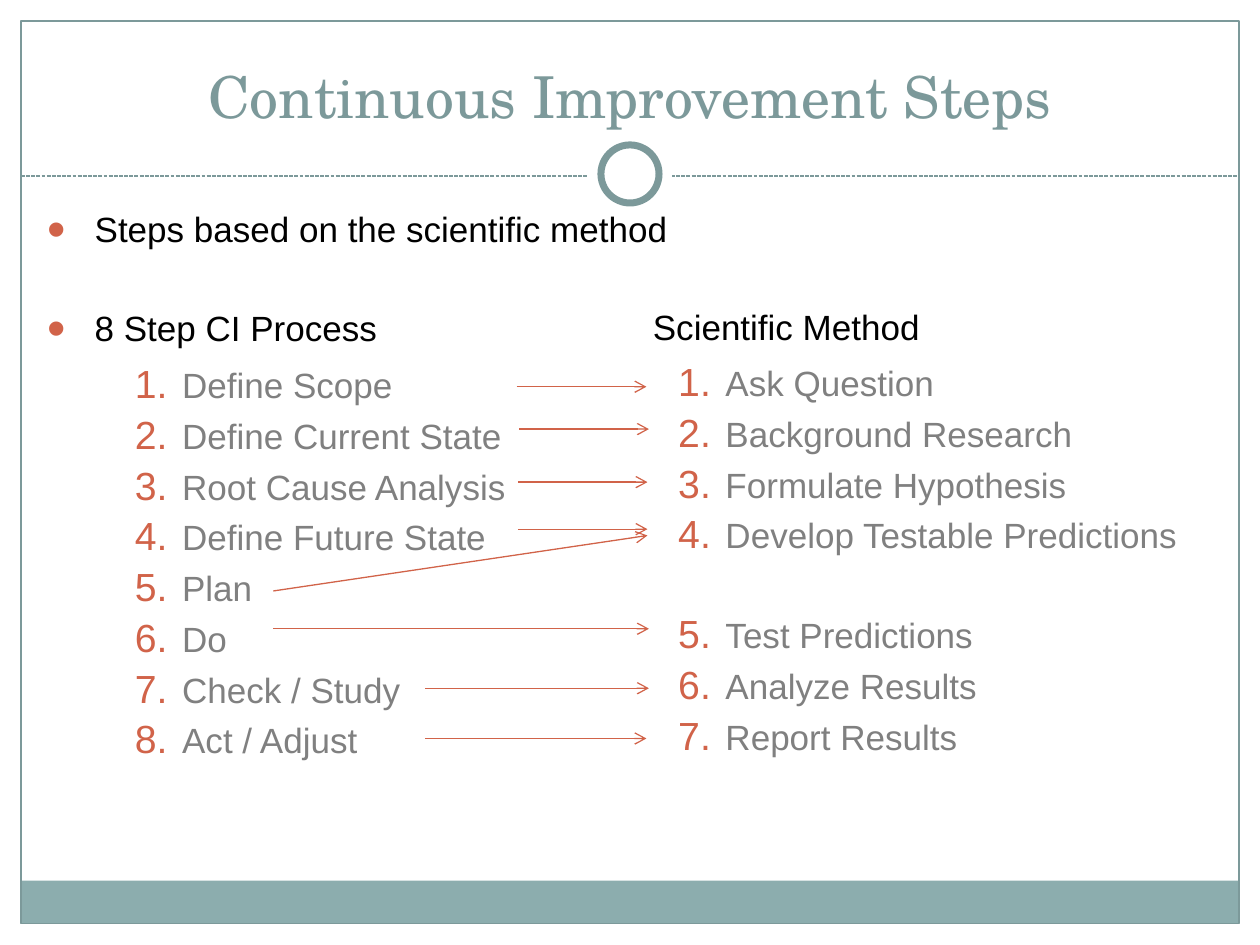
from lxml import etree
from pptx import Presentation
from pptx import util as u
from pptx.dml.color import RGBColor
from pptx.enum import dml, shapes, text
from pptx.oxml.ns import qn

Pt = u.Pt
HUES = {"teal": "7C999A", "band": "8CADAE", "red": "D16349",
        "gray": "808080", "black": "000000", "white": "FFFFFF"}
LEFT = ["Define Scope", "Define Current State", "Root Cause Analysis",
        "Define Future State", "Plan", "Do", "Check / Study", "Act / Adjust"]
RIGHT = ["Ask Question", "Background Research", "Formulate Hypothesis",
         "Develop Testable Predictions", "Test Predictions",
         "Analyze Results", "Report Results"]

deck = Presentation()
deck.slide_width, deck.slide_height = Pt(720), Pt(540)
slide = deck.slides.add_slide(deck.slide_layouts[6])


def hue(name):
    return RGBColor.from_string(HUES[name])


def add_para(frame, words, size=20, font="Arial", color="black", before=3,
             after=3, lines=0.9, margin=0, hang=0, bullet=None):
    para = frame.paragraphs[0]
    if para.runs:
        para = frame.add_paragraph()
    para.space_before, para.space_after = Pt(before), Pt(after)
    para.line_spacing = lines
    run = para.add_run()
    run.text = words
    run.font.size, run.font.name = Pt(size), font
    run.font.color.rgb = hue(color)
    props = para._p.get_or_add_pPr()
    props.set("marL", str(Pt(margin)))
    props.set("indent", str(-Pt(hang)))
    if bullet:
        tag, scale, attrs = bullet
        tint = etree.SubElement(props, qn("a:buClr"))
        etree.SubElement(tint, qn("a:srgbClr"), val=HUES["red"])
        etree.SubElement(props, qn("a:buSzPct"), val=str(scale * 1000))
        etree.SubElement(props, qn("a:buFont"), typeface="Arial")
        etree.SubElement(props, qn(tag), **attrs)
    return para


def add_line(x1, y1, x2, y2, color):
    line = slide.shapes.add_connector(
        shapes.MSO_CONNECTOR.STRAIGHT, Pt(x1), Pt(y1), Pt(x2), Pt(y2))
    line.line.color.rgb = hue(color)
    line.line.width = Pt(0.75)
    etree.SubElement(line._element.spPr, qn("a:effectLst"))
    return line


# Footer band, frame, dashed rule and ring
rule = None
for kind, box, fill, edge in [
        ("RECTANGLE", (11.8, 503.2, 695.8, 24.5), "band", 0),
        ("RECTANGLE", (12, 12, 696, 515.7), None, 0.75),
        ("OVAL", (336, 75.6, 48, 48), "white", 0),
        ("OVAL", (343.4, 82.8, 33.2, 33.2), "white", 4)]:
    if kind == "OVAL" and rule is None:
        rule = add_line(12, 100.6, 708, 100.6, "teal")
        rule.line.dash_style = dml.MSO_LINE.SQUARE_DOT
    shape = slide.shapes.add_shape(
        getattr(shapes.MSO_SHAPE, kind), *map(Pt, box))
    shape.shadow.inherit = False
    if fill:
        shape.fill.solid()
        shape.fill.fore_color.rgb = hue(fill)
    else:
        shape.fill.background()
    if edge:
        shape.line.color.rgb = hue("teal")
        shape.line.width = Pt(edge)
    else:
        shape.line.fill.background()

# Text boxes: title, process steps, scientific method
frames = []
for box in [(24, 18, 672, 60), (20, 118, 668, 338), (330.5, 173.5, 358, 265)]:
    frame = slide.shapes.add_textbox(*map(Pt, box)).text_frame
    frame.word_wrap = True
    frames.append(frame)
title, steps, method = frames

title.vertical_anchor = text.MSO_ANCHOR.BOTTOM
head = add_para(title, "Continuous Improvement Steps", 33, "TeX Gyre Schola",
                "teal", before=0, after=0, lines=1.0)
head.alignment = text.PP_ALIGN.CENTER

# Column headings
dot = ("a:buChar", 150, {"char": "•"})
add_para(steps, "Steps based on the scientific method",
         margin=27, hang=27, bullet=dot)
add_para(steps, "8 Step CI Process", before=32, margin=27, hang=27, bullet=dot)
add_para(method, "Scientific Method", margin=35.5)

# Numbered lists, with a free row beside "Plan"
count = ("a:buAutoNum", 112, {"type": "arabicPeriod"})
for frame, names in [(steps, LEFT), (method, RIGHT)]:
    for name in names:
        gap = 33 if name == "Test Predictions" else 5
        item = add_para(frame, name, color="gray", before=gap, after=0,
                        lines=1.0, margin=77, hang=27, bullet=count)
        item.level = 2

# Arrows from each step to its match
for x1, y1, x2, y2 in [
        (295.2, 221, 369.4, 221), (296.6, 245.2, 370.8, 245.2),
        (296, 275.5, 370, 275.5), (296, 302.4, 370, 302.4),
        (156.2, 337.7, 370, 306), (156.2, 359.3, 370.8, 359.3),
        (243, 393.3, 370.8, 393.3), (243, 422, 369.4, 422)]:
    arrow = add_line(x1, y1, x2, y2, "red")
    etree.SubElement(arrow.line._get_or_add_ln(), qn("a:tailEnd"),
                     type="arrow")

deck.save("out.pptx")
